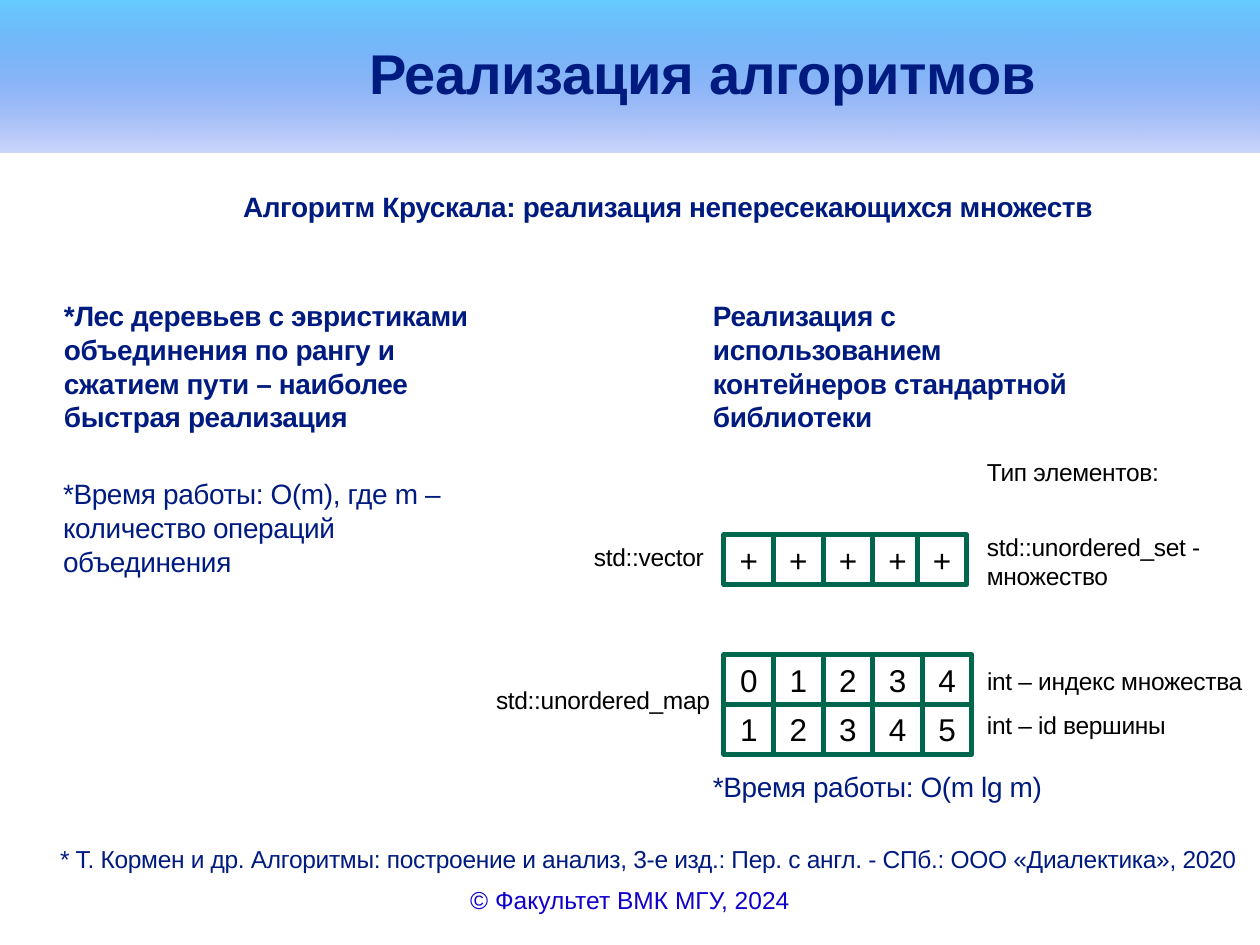
import pptx
import pptx.util
import pptx.dml.color
import pptx.enum.shapes
import pptx.enum.text
import pptx.oxml.ns
import lxml.etree

PX = 914400 / 126
FONT = "Arial"
COLORS = {
    "sky": "66CCFF",
    "blue": "063DE8",
    "footer": "1000CC",
    "navy": "001B80",
    "black": "000000",
    "white": "FFFFFF",
    "green": "00664D",
}

HEADER = (0, 0, 1260, 153)
FOOTER = ("© Факультет ВМК МГУ, 2024", (0, 879, 1260, 42))

TEXTS = [
    ("Реализация алгоритмов", (369, 38, 688, 69), 32, "navy", True),
    ("Алгоритм Крускала: реализация непересекающихся множеств",
     (243, 189, 873, 35), 16, "navy", True),
    ("*Лес деревьев с эвристиками объединения по рангу и сжатием пути – наиболее быстрая реализация",
     (64, 298, 407, 136), 16, "navy", True),
    ("* Т. Кормен и др. Алгоритмы: построение и анализ, 3-е изд.: Пер. с англ. - СПб.: ООО «Диалектика», 2020",
     (60, 843, 1191, 32), 14, "navy", False),
    ("*Время работы: O(m), где m – количество операций объединения",
     (63, 476, 407, 102), 16, "navy", False),
    ("Реализация с использованием контейнеров стандартной библиотеки",
     (713, 298, 407, 136), 16, "navy", True),
    ("std::vector", (594, 541, 111, 32), 14, "black", False),
    ("std::unordered_map", (496, 684, 223, 32), 14, "black", False),
    ("Тип элементов:", (987, 456, 174, 32), 14, "black", False),
    ("std::unordered_set - множество", (987, 531, 228, 60), 14, "black", False),
    ("int – индекс множества", (987, 665, 273, 32), 14, "black", False),
    ("int – id вершины", (987, 709, 228, 32), 14, "black", False),
    ("*Время работы: O(m lg m)", (713, 769, 354, 35), 16, "navy", False),
]

VECTOR = ["+++++"]
MAP = ["01234", "12345"]
CELLS_LEFT = 724
CELLS_WIDTH = 248
CELL = CELLS_WIDTH / 5
VECTOR_TOP = 535
MAP_TOP = 655
LAST_VECTOR_SHIFT = -5


def emu(px):
    return pptx.util.Emu(round(px * PX))


def color(name):
    return pptx.dml.color.RGBColor.from_string(COLORS[name])


def set_insets(frame, left, top, right, bottom):
    frame.margin_left, frame.margin_top = emu(left), emu(top)
    frame.margin_right, frame.margin_bottom = emu(right), emu(bottom)


def add_span(frame, text, size, tone, bold=False, spacing=None, centered=False):
    para = frame.paragraphs[0]
    if centered:
        para.alignment = pptx.enum.text.PP_ALIGN.CENTER
    span = para.add_run()
    span.text = text
    span.font.name = FONT
    span.font.size = pptx.util.Pt(size)
    span.font.bold = bold
    span.font.color.rgb = color(tone)
    if spacing is not None:
        span.font._element.set("spc", str(spacing))


def add_rect(slide, place):
    shape = slide.shapes.add_shape(
        pptx.enum.shapes.MSO_SHAPE.RECTANGLE, *map(emu, place))
    shape.shadow.inherit = False
    return shape


def add_header(slide):
    band = add_rect(slide, HEADER)
    band.line.fill.background()
    band.fill.gradient()
    band.fill.gradient_angle = 270
    for stop, tone, position in zip(band.fill.gradient_stops, ("sky", "blue"), (0, 1)):
        stop.color.rgb = color(tone)
        stop.position = position
    qn = pptx.oxml.ns.qn
    last = list(band._element.spPr.iter(qn("a:srgbClr")))[-1]
    lxml.etree.SubElement(last, qn("a:alpha")).set("val", "20000")


def add_box(slide, place, insets):
    frame = slide.shapes.add_textbox(*map(emu, place)).text_frame
    frame.word_wrap = True
    frame.auto_size = pptx.enum.text.MSO_AUTO_SIZE.SHAPE_TO_FIT_TEXT
    set_insets(frame, *insets)
    return frame


def add_cells(slide, rows, top, last_shift=0):
    for row, symbols in enumerate(rows):
        for column, symbol in enumerate(symbols):
            shift = last_shift if column == len(symbols) - 1 else 0
            left = CELLS_LEFT + column * CELL + shift
            cell = add_rect(slide, (left, top + row * CELL, CELL, CELL))
            cell.fill.solid()
            cell.fill.fore_color.rgb = color("white")
            cell.line.color.rgb = color("green")
            cell.line.width = pptx.util.Pt(2.83)
            frame = cell.text_frame
            frame.vertical_anchor = pptx.enum.text.MSO_ANCHOR.MIDDLE
            set_insets(frame, 15, 9, 15, 9)
            add_span(frame, symbol, 18, "black", centered=True)


def main():
    deck = pptx.Presentation()
    deck.slide_width, deck.slide_height = emu(1260), emu(945)
    slide = deck.slides.add_slide(deck.slide_layouts[6])

    add_header(slide)
    text, place = FOOTER
    add_span(add_box(slide, place, (13, 6, 13, 6)), text, 14, "footer", centered=True)
    add_cells(slide, VECTOR, VECTOR_TOP, LAST_VECTOR_SHIFT)
    add_cells(slide, MAP, MAP_TOP)
    for text, place, size, tone, bold in TEXTS:
        add_span(add_box(slide, place, (0, 1, 0, 0)), text, size, tone, bold, -20)

    deck.save("out.pptx")


if __name__ == "__main__":
    main()
